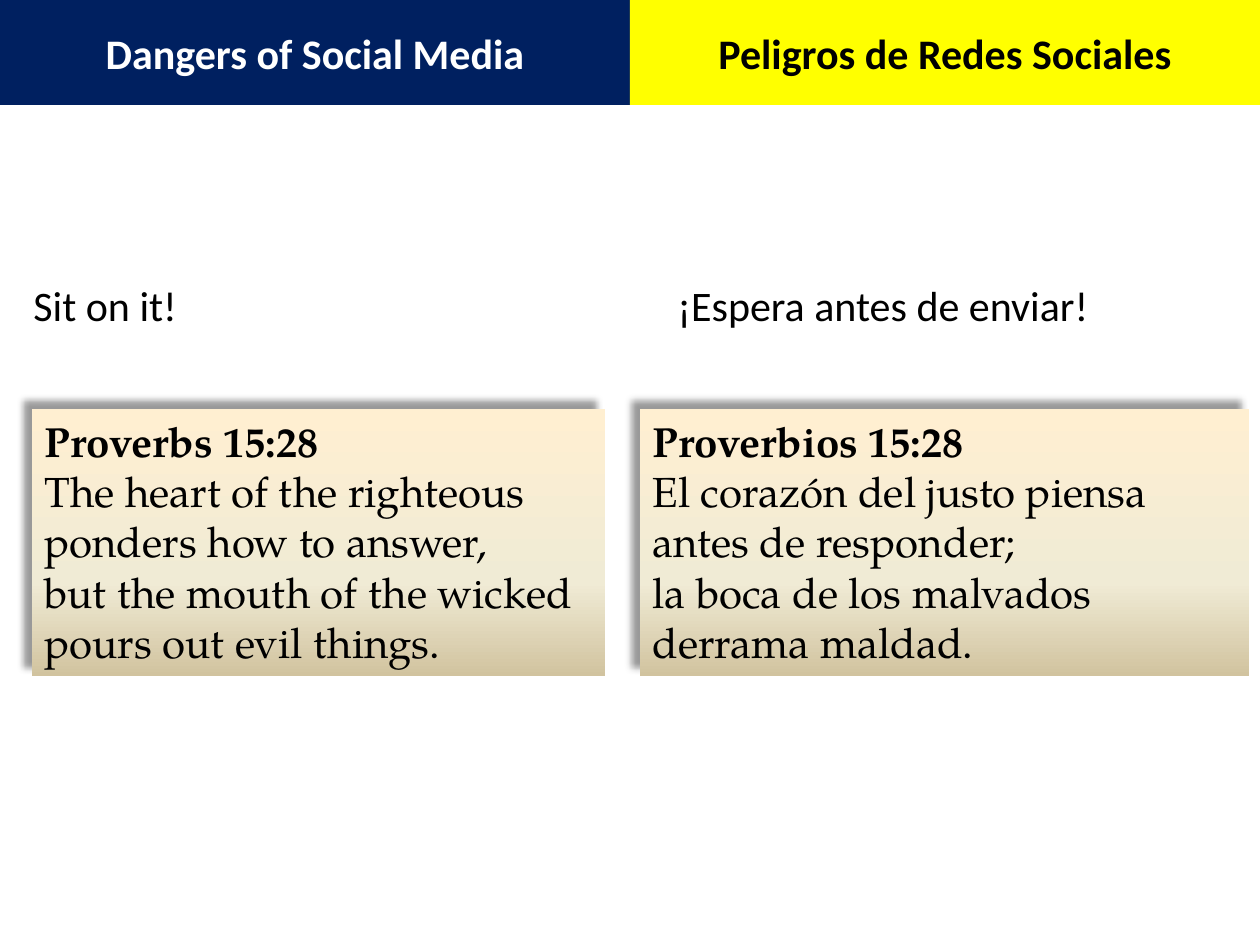
from copy import deepcopy
from dataclasses import dataclass

from lxml.etree import SubElement
from pptx import Presentation
from pptx.dml.color import RGBColor
from pptx.enum.shapes import MSO_SHAPE as Shape
from pptx.enum.text import MSO_ANCHOR as Anchor, MSO_AUTO_SIZE as AutoSize, PP_ALIGN as Align
from pptx.oxml.ns import qn
from pptx.shapes.autoshape import Shape as AutoShape
from pptx.slide import Slide
from pptx.text.text import _Paragraph as Paragraph
from pptx.util import Emu, Pt

PX = 914400 / 126
SLIDE_WIDTH, SLIDE_HEIGHT = 1260, 945
BANNER_HEIGHT = 105
PROMPT_TOP, PROMPT_HEIGHT = 273, 63
VERSE_TOP, VERSE_HEIGHT = 409, 267
TEXT_SIZE = 24
HEADING_FONT, VERSE_FONT = "Calibri", "TeX Gyre Pagella"
COLORS = {
    "navy": "002060",
    "yellow": "FFFF00",
    "white": "FFFFFF",
    "black": "000000",
    "cream": "FFEFD1",
    "ivory": "F0EBD5",
    "sand": "D1C39F",
}
VERSE_GRADIENT = [(0, "cream"), (0.65, "ivory"), (1, "sand")]


@dataclass
class Column:
    title: str
    banner_color: str
    title_color: str
    prompt: str
    prompt_left: int
    prompt_width: int
    reference: str
    verse: str
    verse_left: int
    verse_width: int


COLUMNS = [
    Column("Dangers of Social Media", "navy", "white", "Sit on it!", 21, 483,
           "Proverbs 15:28",
           "The heart of the righteous ponders how to answer,\v"
           "but the mouth of the wicked pours out evil things.", 32, 573),
    Column("Peligros de Redes Sociales", "yellow", "black", "¡Espera antes de enviar!", 665, 520,
           "Proverbios 15:28",
           "El corazón del justo piensa antes de responder;\v"
           "la boca de los malvados derrama maldad.", 640, 609),
]


def px(length: int) -> Emu:
    return Emu(round(length * PX))


def rgb(name: str) -> RGBColor:
    return RGBColor.from_string(COLORS[name])


def write(paragraph: Paragraph, text: str, font: str, color: str = "black", bold: bool = False) -> None:
    paragraph.text = text
    for run in paragraph.runs:
        run.font.name = font
        run.font.size = Pt(TEXT_SIZE)
        run.font.bold = bold
        run.font.color.rgb = rgb(color)


def add_rectangle(slide: Slide, left: int, top: int, width: int, height: int) -> AutoShape:
    shape = slide.shapes.add_shape(Shape.RECTANGLE, px(left), px(top), px(width), px(height))
    shape.shadow.inherit = False
    shape.line.fill.background()
    shape.text_frame.word_wrap = True
    return shape


def add_banner(slide: Slide, column: Column, left: int, width: int) -> None:
    shape = add_rectangle(slide, left, 0, width, BANNER_HEIGHT)
    shape.fill.solid()
    shape.fill.fore_color.rgb = rgb(column.banner_color)
    shape.text_frame.vertical_anchor = Anchor.MIDDLE
    paragraph = shape.text_frame.paragraphs[0]
    write(paragraph, column.title, HEADING_FONT, column.title_color, bold=True)
    paragraph.alignment = Align.CENTER


def add_prompt(slide: Slide, column: Column) -> None:
    shape = slide.shapes.add_textbox(px(column.prompt_left), px(PROMPT_TOP),
                                     px(column.prompt_width), px(PROMPT_HEIGHT))
    shape.text_frame.word_wrap = True
    shape.text_frame.auto_size = AutoSize.SHAPE_TO_FIT_TEXT
    write(shape.text_frame.paragraphs[0], column.prompt, HEADING_FONT)


def fill_gradient(shape: AutoShape) -> None:
    shape.fill.gradient()
    shape.fill.gradient_angle = 270
    stop_list = shape.element.spPr.find(".//" + qn("a:gsLst"))
    stop_list.append(deepcopy(stop_list[0]))
    for stop, (position, color) in zip(shape.fill.gradient_stops, VERSE_GRADIENT):
        stop.position = position
        stop.color.rgb = rgb(color)


def add_shadow(shape: AutoShape) -> None:
    effects = shape.element.spPr.find(qn("a:effectLst"))
    shadow = SubElement(effects, qn("a:outerShdw"), blurRad=str(Pt(4)), dist=str(Pt(7)),
                        dir=str(225 * 60000), algn="br", rotWithShape="0")
    color = SubElement(shadow, qn("a:srgbClr"), val=COLORS["black"])
    SubElement(color, qn("a:alpha"), val="40000")


def add_verse(slide: Slide, column: Column) -> None:
    shape = add_rectangle(slide, column.verse_left, VERSE_TOP, column.verse_width, VERSE_HEIGHT)
    fill_gradient(shape)
    add_shadow(shape)
    text_frame = shape.text_frame
    text_frame.vertical_anchor = Anchor.TOP
    text_frame.auto_size = AutoSize.SHAPE_TO_FIT_TEXT
    write(text_frame.paragraphs[0], column.reference, VERSE_FONT, bold=True)
    write(text_frame.add_paragraph(), column.verse, VERSE_FONT)
    for paragraph in text_frame.paragraphs:
        paragraph.alignment = Align.LEFT


def main() -> None:
    presentation = Presentation()
    presentation.slide_width = px(SLIDE_WIDTH)
    presentation.slide_height = px(SLIDE_HEIGHT)
    slide = presentation.slides.add_slide(presentation.slide_layouts[6])
    banner_width = SLIDE_WIDTH // len(COLUMNS)
    for index, column in enumerate(COLUMNS):
        add_banner(slide, column, index * banner_width, banner_width)
        add_prompt(slide, column)
        add_verse(slide, column)
    presentation.save("out.pptx")


if __name__ == "__main__":
    main()
